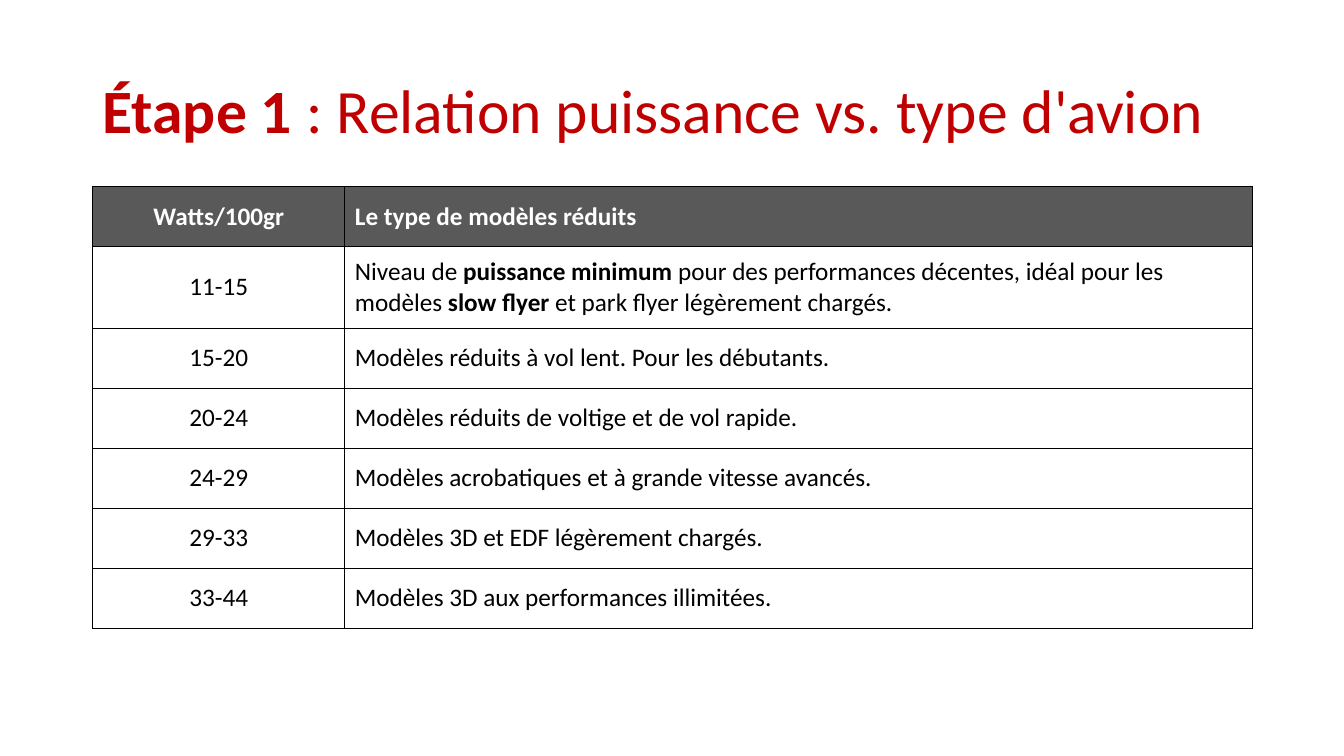
from lxml import etree
from pptx import Presentation
from pptx.dml.color import RGBColor
from pptx.enum import text
from pptx.oxml import ns
from pptx.util import Inches, Pt


def color(hex_value):
    return RGBColor.from_string(hex_value)


def write(frame, content, size=18, ink="000000", bold=False, align=text.PP_ALIGN.LEFT, spacing=1.0):
    frame.word_wrap = True
    paragraph = frame.paragraphs[0]
    paragraph.alignment = align
    paragraph.line_spacing = spacing
    for index, part in enumerate(content.split("**")):
        if part:
            run = paragraph.add_run()
            run.text = part
            run.font.name = "Calibri"
            run.font.size = Pt(size)
            run.font.bold = bold or index % 2 == 1
            run.font.color.rgb = color(ink)


presentation = Presentation()
presentation.slide_width = Inches(13.33)
presentation.slide_height = Inches(7.5)
slide = presentation.slides.add_slide(presentation.slide_layouts[6])

title = slide.shapes.add_textbox(Inches(0.92), Inches(0.4), Inches(11.5), Inches(1.45))
title.text_frame.vertical_anchor = text.MSO_ANCHOR.MIDDLE
write(title.text_frame, "**Étape 1 **: Relation puissance vs. type d'avion",
      size=44, ink="C00000", spacing=0.9)

power_levels = [
    ("Watts/100gr", "Le type de modèles réduits"),
    ("11-15", "Niveau de **puissance minimum **pour des performances décentes, "
              "idéal pour les modèles **slow flyer **et park flyer légèrement chargés."),
    ("15-20", "Modèles réduits à vol lent. Pour les débutants."),
    ("20-24", "Modèles réduits de voltige et de vol rapide."),
    ("24-29", "Modèles acrobatiques et à grande vitesse avancés."),
    ("29-33", "Modèles 3D et EDF légèrement chargés."),
    ("33-44", "Modèles 3D aux performances illimitées."),
]
table_height = 4.38
tall_row = 0.81
plain_row = (table_height - tall_row) / (len(power_levels) - 1)

table_shape = slide.shapes.add_table(len(power_levels), 2, Inches(0.92), Inches(1.85),
                                     Inches(11.5), Inches(table_height))
table = table_shape.table
table.first_row = True
table.horz_banding = False
table.columns[0].width = Inches(2.5)
table.columns[1].width = Inches(9)

for row, values in enumerate(power_levels):
    header = row == 0
    table.rows[row].height = Inches(tall_row if row == 1 else plain_row)
    for column, value in enumerate(values):
        cell = table.cell(row, column)
        cell.vertical_anchor = text.MSO_ANCHOR.MIDDLE
        write(cell.text_frame, value, ink="FFFFFF" if header else "000000", bold=header,
              align=text.PP_ALIGN.LEFT if column else text.PP_ALIGN.CENTER)
        properties = cell._tc.get_or_add_tcPr()
        inner_side = "L" if column else "R"
        for side in "LRTB":
            width = Pt(1 if side == inner_side else 0.5)
            border = etree.SubElement(properties, ns.qn(f"a:ln{side}"), w=str(width))
            fill = etree.SubElement(border, ns.qn("a:solidFill"))
            etree.SubElement(fill, ns.qn("a:srgbClr"), val="000000")
        if header:
            cell.fill.solid()
            cell.fill.fore_color.rgb = color("595959")
        else:
            cell.fill.background()

presentation.save("out.pptx")
